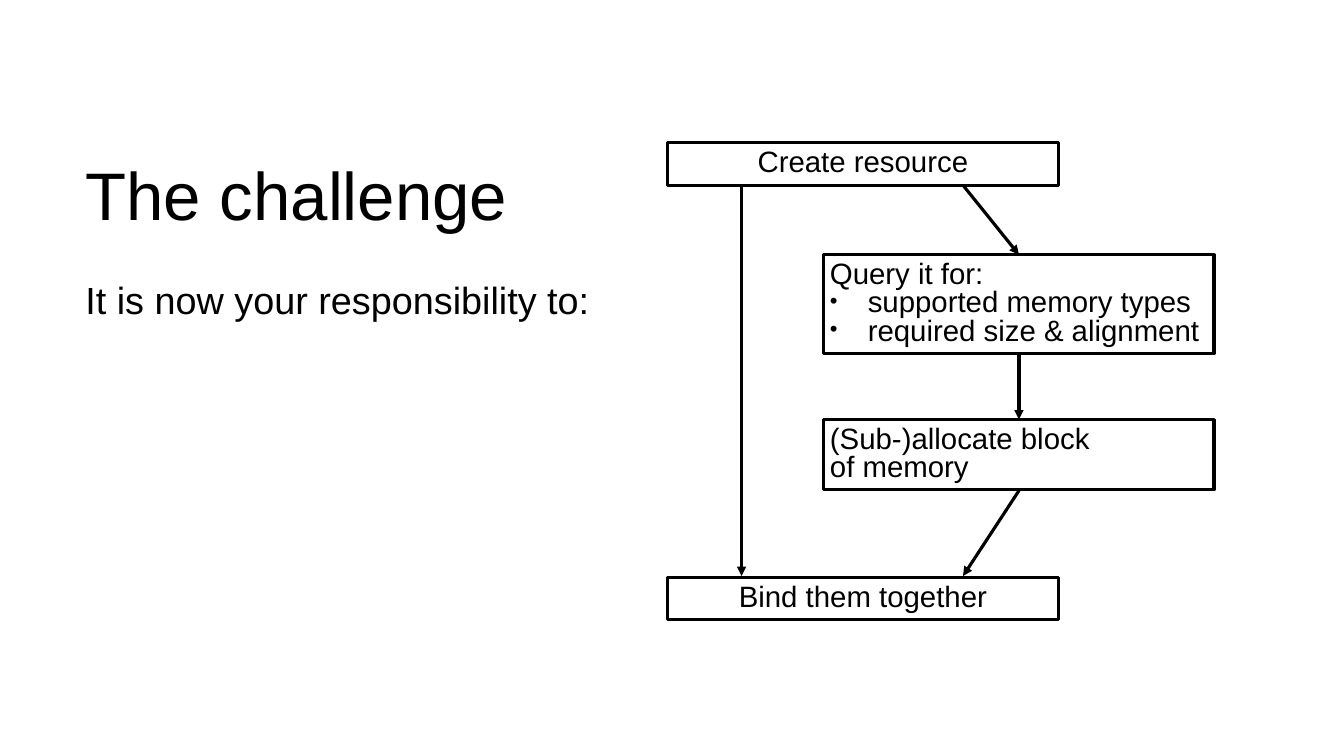
from lxml import etree
from pptx import Presentation, util as u
from pptx.dml.color import RGBColor
from pptx.enum import shapes, text
from pptx.oxml.ns import qn

PX = 9144
COLORS = {"ink": "000000", "paper": "FFFFFF"}


def px(*values):
    return [u.Emu(v * PX) for v in values]


class Deck:
    font = "Arial"
    inset = 9
    line_width = 3

    def __init__(self, width, height):
        self.prs = Presentation()
        self.prs.slide_width, self.prs.slide_height = px(width, height)
        self.s = self.prs.slides.add_slide(self.prs.slide_layouts[5])
        fill = self.s.background.fill
        fill.solid()
        fill.fore_color.rgb = self.color("paper")

    def color(self, name):
        return RGBColor.from_string(COLORS[name])

    def outline(self, sp):
        sp.line.color.rgb = self.color("ink")
        sp.line.width = u.Pt(self.line_width)

    def bullet(self, p):
        pPr = p._p.get_or_add_pPr()
        indent = px(50)[0]
        pPr.set("marL", str(indent))
        pPr.set("indent", str(-indent))
        clr = etree.SubElement(pPr, qn("a:buClr"))
        etree.SubElement(clr, qn("a:srgbClr"), val=COLORS["ink"])
        etree.SubElement(pPr, qn("a:buSzPct"), val="75000")
        etree.SubElement(pPr, qn("a:buFont"), typeface=self.font)
        etree.SubElement(pPr, qn("a:buChar"), char="•")

    def set_text(self, sp, lines, size, anchor, align="LEFT", spacing=None, bullets=False):
        tf = sp.text_frame
        inset = px(self.inset)[0]
        frame = {"word_wrap": True, "auto_size": text.MSO_AUTO_SIZE.NONE,
                 "vertical_anchor": text.MSO_ANCHOR[anchor],
                 "margin_left": inset, "margin_right": inset,
                 "margin_top": inset, "margin_bottom": inset}
        for name, value in frame.items():
            setattr(tf, name, value)
        for i, line in enumerate(lines):
            p = tf.add_paragraph() if i else tf.paragraphs[0]
            p.text = line
            if bullets and i:
                self.bullet(p)
            p.alignment = text.PP_ALIGN[align]
            p.line_spacing = spacing
            for r in p.runs:
                for name, value in {"name": self.font, "size": u.Pt(size)}.items():
                    setattr(r.font, name, value)
                r.font.color.rgb = self.color("ink")

    def title(self, words, *box):
        sp = self.s.shapes.title
        for name, value in zip(("left", "top", "width", "height"), px(*box)):
            setattr(sp, name, value)
        self.set_text(sp, [words], 64, "MIDDLE", spacing=0.85)

    def body(self, words, *box):
        self.set_text(self.s.shapes.add_textbox(*px(*box)), [words], 36, "TOP")

    def step(self, lines, *box, **style):
        sp = self.s.shapes.add_shape(shapes.MSO_SHAPE.RECTANGLE, *px(*box))
        sp.shadow.inherit = False
        sp.fill.background()
        self.outline(sp)
        self.set_text(sp, lines, 28, "MIDDLE", spacing=0.8, **style)

    def arrow(self, *ends):
        c = self.s.shapes.add_connector(shapes.MSO_CONNECTOR.STRAIGHT, *px(*ends))
        self.outline(c)
        spPr = c._element.spPr
        etree.SubElement(spPr.find(qn("a:ln")), qn("a:tailEnd"), type="triangle")
        etree.SubElement(spPr, qn("a:effectLst"))


def main():
    deck = Deck(1778, 1000)
    deck.title("The challenge", 104, 189, 1570, 152)
    deck.body("It is now your responsibility to:", 104, 357, 1296, 528)

    outer, inner, width = 883, 1089, 517
    for label, top in (("Create resource", 189), ("Bind them together", 764)):
        deck.step([label], outer, top, width, 56, align="CENTER")
    deck.step(["Query it for:", "supported memory types", "required size & alignment"],
              inner, 337, width, 131, bullets=True)
    deck.step(["(Sub-)allocate block\nof memory"], inner, 555, width, 93)

    direct, branch, middle = 981, 1274, 1348
    for ends in ((branch, 245, middle, 337), (middle, 468, middle, 555),
                 (direct, 245, direct, 762), (middle, 649, branch, 762)):
        deck.arrow(*ends)
    deck.prs.save("out.pptx")


if __name__ == "__main__":
    main()
